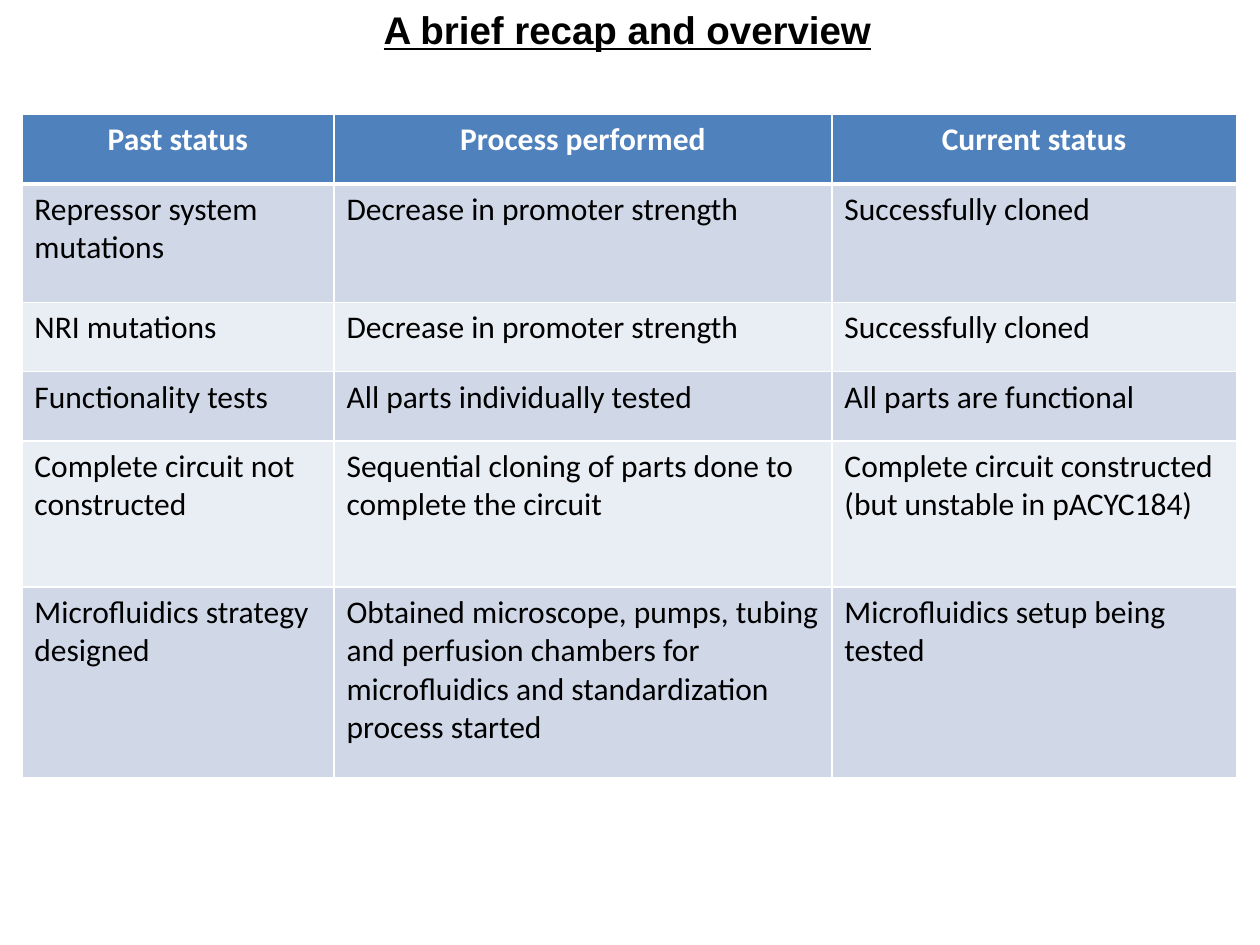
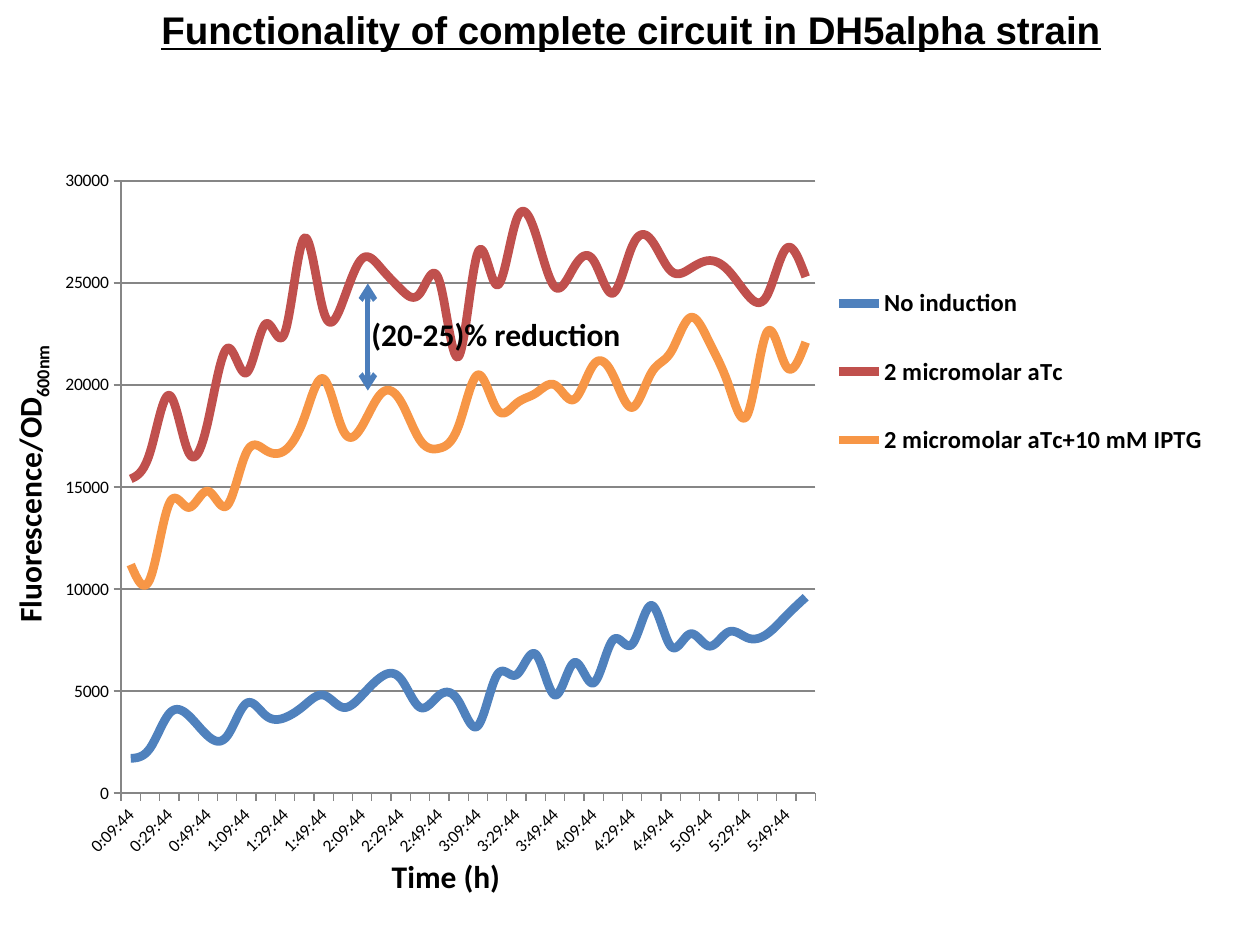
from lxml.etree import SubElement
from pptx import Presentation
from pptx.chart.data import CategoryChartData
from pptx.dml.color import RGBColor
from pptx.enum.chart import XL_CHART_TYPE as ChartType, XL_LEGEND_POSITION as LegendPosition
from pptx.enum.shapes import MSO_CONNECTOR as Connector
from pptx.enum.text import MSO_ANCHOR as Anchor, PP_ALIGN as Align
from pptx.oxml import parse_xml
from pptx.oxml.ns import nsdecls, qn
from pptx.util import Pt

BLACK = RGBColor(0x00, 0x00, 0x00)
WHITE = RGBColor(0xFF, 0xFF, 0xFF)
BLUE = RGBColor(0x4F, 0x81, 0xBD)
RED = RGBColor(0xC0, 0x50, 0x4D)
ORANGE = RGBColor(0xF7, 0x96, 0x46)
ARROW_BLUE = RGBColor(0x4B, 0x7E, 0xBC)
GRID_GREY = RGBColor(0x86, 0x86, 0x86)
BANDS = (RGBColor(0xD0, 0xD8, 0xE8), RGBColor(0xE9, 0xED, 0xF4))

RECAP = [
    ("Past status", "Process performed", "Current status"),
    ("Repressor system mutations", "Decrease in promoter strength", "Successfully cloned"),
    ("NRI mutations", "Decrease in promoter strength", "Successfully cloned"),
    ("Functionality tests", "All parts individually tested", "All parts are functional"),
    ("Complete circuit not constructed",
     "Sequential cloning of parts done to complete the circuit",
     "Complete circuit constructed (but unstable in pACYC184)"),
    ("Microfluidics strategy designed",
     "Obtained microscope, pumps, tubing and perfusion chambers for microfluidics "
     "and standardization process started",
     "Microfluidics setup being tested"),
]
COLUMN_SHARES = (0.257, 0.41, 0.333)
ROW_HEIGHTS = (39.6, 67.7, 39.6, 39.6, 83.5, 108.7)

TIMES = [f"{minute // 60}:{minute % 60:02}:44" for minute in range(9, 369, 10)]
FLUORESCENCE = [
    ("No induction", BLUE,
     [1700, 2200, 3900, 3800, 2800, 2800, 4400, 3800, 3700, 4300, 4800, 4200,
      4800, 5700, 5600, 4200, 4800, 4500, 3300, 5800, 5800, 6800, 4800, 6400,
      5400, 7500, 7300, 9200, 7200, 7800, 7200, 7900, 7600, 7800, 8700, 9600]),
    ("2 micromolar aTc", RED,
     [15400, 16700, 19500, 16700, 18200, 21800, 20600, 23000, 22600, 27200, 23600, 24100,
      26200, 25700, 24700, 24500, 25100, 21400, 26500, 24900, 28100, 27400, 24800, 25800,
      26100, 24500, 26800, 27100, 25600, 25700, 26100, 25600, 24400, 24400, 26700, 25300]),
    ("2 micromolar aTc+10 mM IPTG", ORANGE,
     [11200, 10500, 14200, 14000, 14800, 14100, 16700, 16800, 16800, 18400, 20300, 17800,
      18000, 19600, 19200, 17300, 16900, 18000, 20500, 18800, 19100, 19600, 20000, 19300,
      21000, 20500, 18900, 20600, 21600, 23300, 22100, 20000, 18600, 22600, 20900, 22100]),
]


def write(frame, text, size=18, font="Calibri", color=BLACK, bold=True,
          underline=None, align=Align.LEFT, subscript=""):
    paragraph = frame.paragraphs[0]
    paragraph.alignment = align
    for part in filter(None, (text, subscript)):
        run = paragraph.add_run()
        run.text = part
        run.font.size, run.font.name = Pt(size), font
        run.font.bold, run.font.underline = bold, underline
        run.font.color.rgb = color
        if part == subscript:
            run.font._element.set("baseline", "-25000")


def place(shape, box):
    shape.left, shape.top, shape.width, shape.height = map(Pt, box)


def titled_slide(deck, title, box):
    slide = deck.slides.add_slide(deck.slide_layouts[5])
    place(slide.shapes.title, box)
    frame = slide.shapes.title.text_frame
    frame.word_wrap = False
    frame.vertical_anchor = Anchor.TOP
    write(frame, title, size=22, font="Arial", underline=True, align=Align.CENTER)
    return slide


def label(slide, text, box, rotation=0, **style):
    caption = slide.shapes.add_textbox(*map(Pt, box))
    caption.rotation = rotation
    caption.text_frame.word_wrap = False
    write(caption.text_frame, text, **style)


def border(cell, side, width):
    edge = SubElement(cell._tc.get_or_add_tcPr(), qn(f"a:ln{side}"), w=str(Pt(width)))
    fill = SubElement(edge, qn("a:solidFill"))
    SubElement(fill, qn("a:srgbClr"), val=str(WHITE))


def recap_table(slide, box):
    left, top, width, height = box
    recap = slide.shapes.add_table(len(RECAP), len(COLUMN_SHARES), *map(Pt, box)).table
    for column, share in zip(recap.columns, COLUMN_SHARES):
        column.width = Pt(width * share)
    for row, row_height in zip(recap.rows, ROW_HEIGHTS):
        row.height = Pt(height * row_height / sum(ROW_HEIGHTS))
    for r, entries in enumerate(RECAP):
        header = r == 0
        for c, entry in enumerate(entries):
            cell = recap.cell(r, c)
            for side in "LRTB":
                under_header = (r, side) in ((0, "B"), (1, "T"))
                border(cell, side, 3 if under_header else 1)
            cell.fill.solid()
            cell.fill.fore_color.rgb = BLUE if header else BANDS[(r - 1) % 2]
            write(cell.text_frame, entry, bold=header,
                  color=WHITE if header else BLACK,
                  align=Align.CENTER if header else Align.LEFT)


def manual_layout(x, y, w, h, inner=False):
    target = '<c:layoutTarget val="inner"/>' if inner else ""
    return parse_xml(
        f'<c:layout {nsdecls("c")}><c:manualLayout>{target}'
        '<c:xMode val="edge"/><c:yMode val="edge"/>'
        f'<c:x val="{x}"/><c:y val="{y}"/><c:w val="{w}"/><c:h val="{h}"/>'
        '</c:manualLayout></c:layout>')


def set_layout(element, layout, position):
    for old in element.findall(qn("c:layout")):
        element.remove(old)
    element.insert(position, layout)


def style_axes(chart):
    times, levels = chart.category_axis, chart.value_axis
    levels.minimum_scale, levels.maximum_scale, levels.major_unit = 0, 30000, 5000
    levels.has_major_gridlines = True
    for line in (times.format.line, levels.format.line, levels.major_gridlines.format.line):
        line.color.rgb = GRID_GREY
        line.width = Pt(0.75)
    times.tick_labels.font.size = Pt(10)
    times._element.find(qn("c:txPr")).find(qn("a:bodyPr")).set("rot", "-2700000")
    no_multi_level = times._element.find(qn("c:noMultiLvlLbl"))
    for tag, step in (("c:tickLblSkip", "2"), ("c:tickMarkSkip", "1")):
        skip = parse_xml(f'<{tag} {nsdecls("c")} val="{step}"/>')
        no_multi_level.addprevious(skip)


def fluorescence_chart(slide, box):
    data = CategoryChartData()
    data.categories = TIMES
    for name, _, values in FLUORESCENCE:
        data.add_series(name, values)
    chart = slide.shapes.add_chart(ChartType.LINE, *map(Pt, box), data).chart
    chart.has_title = False
    chart.font.size, chart.font.name = Pt(10), "Calibri"
    chart.font.color.rgb = BLACK
    chart.plots[0].vary_by_categories = False
    for series, (_, color, _) in zip(chart.plots[0].series, FLUORESCENCE):
        series.smooth = True
        series.format.line.color.rgb = color
        series.format.line.width = Pt(5)
    style_axes(chart)
    chart.has_legend = True
    legend = chart.legend
    legend.position = LegendPosition.RIGHT
    legend.include_in_layout = False
    legend.font.size, legend.font.bold = Pt(14), True
    set_layout(legend._element, manual_layout(0.66, 0.13, 0.33, 0.34), 1)
    plot_area = chart._chartSpace.chart.plotArea
    set_layout(plot_area, manual_layout(0.067, 0.033, 0.585, 0.857, inner=True), 0)


def reduction_arrow(slide, x, bottom, top):
    arrow = slide.shapes.add_connector(Connector.STRAIGHT, *map(Pt, (x, bottom, x, top)))
    arrow.line.color.rgb = ARROW_BLUE
    arrow.line.width = Pt(3)
    outline = arrow.line._get_or_add_ln()
    for end in ("a:headEnd", "a:tailEnd"):
        SubElement(outline, qn(end), type="arrow")
    SubElement(arrow._element.spPr, qn("a:effectLst"))


def recap_slide(deck):
    slide = titled_slide(deck, "A brief recap and overview", (210.2, 0, 296.6, 33.8))
    recap_table(slide, (12.5, 65.5, 694, 378.7))


def functionality_slide(deck):
    slide = titled_slide(deck, "Functionality of complete circuit in DH5alpha strain",
                         (79.2, 0, 563, 33.8))
    left, top, width, height = box = (23.8, 90, 678.2, 408.2)
    fluorescence_chart(slide, box)
    reduction_arrow(slide, left + 186.4, top + 133.2, top + 72)
    label(slide, "(20-25)% reduction", (left + 181.4, top + 86.4, 158.4, 28.8))
    label(slide, "Time (h)", (left + 193, top + 396, 77, 28.8))
    label(slide, "Fluorescence/OD", (left - 96.5, top + 169.2, 178.6, 28.8),
          rotation=270, subscript="600nm")


def main():
    deck = Presentation()
    deck.slide_width, deck.slide_height = Pt(720), Pt(540)
    recap_slide(deck)
    functionality_slide(deck)
    deck.save("out.pptx")


if __name__ == "__main__":
    main()
